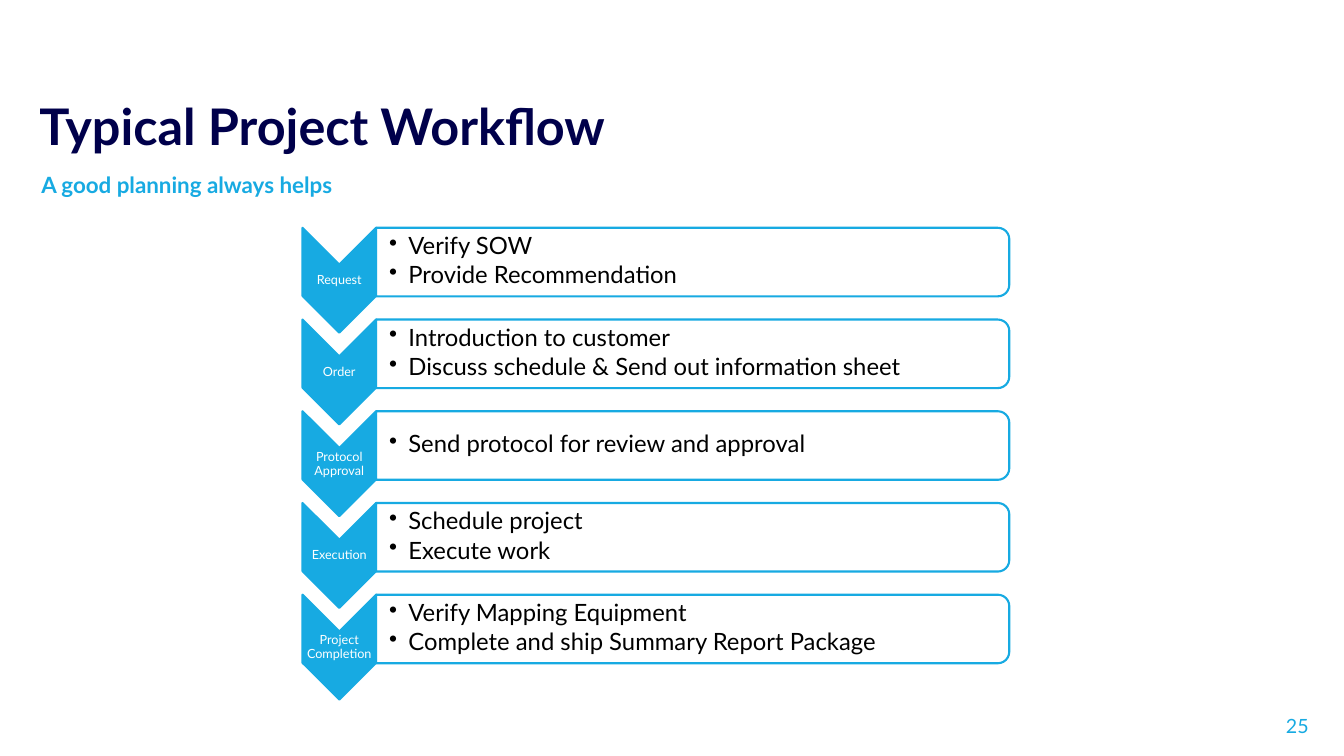
import pptx
import pptx.dml.color
import pptx.enum.shapes
import pptx.enum.text
import pptx.oxml
import pptx.oxml.ns
import pptx.util

Inches = pptx.util.Inches
Pt = pptx.util.Pt
RGBColor = pptx.dml.color.RGBColor
Shape = pptx.enum.shapes.MSO_SHAPE
Align = pptx.enum.text.PP_ALIGN
Anchor = pptx.enum.text.MSO_ANCHOR

NAVY = RGBColor(0x00, 0x00, 0x4B)
CYAN = RGBColor(0x17, 0xAA, 0xE2)
WHITE = RGBColor(0xFF, 0xFF, 0xFF)
BLACK = RGBColor(0x00, 0x00, 0x00)

STEPS = [
    ("Request", ["Verify SOW", "Provide Recommendation"]),
    ("Order", ["Introduction to customer",
               "Discuss schedule & Send out information sheet"]),
    ("Protocol Approval", ["Send protocol for review and approval"]),
    ("Execution", ["Schedule project", "Execute work"]),
    ("Project Completion", ["Verify Mapping Equipment",
                            "Complete and ship Summary Report Package"]),
]
STEP_PITCH = 0.91


def set_all(target, values):
    for name, value in values.items():
        setattr(target, name, value)


class SlideBuilder:
    font_name = "Lato"

    def __init__(self, page):
        self.page = page

    def fill_text(self, box, lines, font, paragraph, margins=(0, 0, 0, 0),
                  anchor=Anchor.TOP, bullet_indent=None):
        """Write one paragraph per line; margins run left, top, right, bottom."""
        frame = box.text_frame
        left, top, right, bottom = map(Inches, margins)
        set_all(frame, {
            "word_wrap": True, "auto_size": pptx.enum.text.MSO_AUTO_SIZE.NONE,
            "vertical_anchor": anchor, "margin_left": left, "margin_top": top,
            "margin_right": right, "margin_bottom": bottom})
        for index, line in enumerate(lines):
            para = frame.add_paragraph() if index else frame.paragraphs[0]
            set_all(para, paragraph)
            if bullet_indent:
                self.add_bullet(para, bullet_indent)
            span = para.add_run()
            span.text = line
            set_all(span.font, {"name": self.font_name, "size": Pt(font["size"]),
                                "bold": font.get("bold", False)})
            span.font.color.rgb = font["color"]

    def add_bullet(self, para, indent):
        properties = para._p.get_or_add_pPr()
        properties.set("marL", str(Inches(indent)))
        properties.set("indent", str(-Inches(indent)))
        bullet = pptx.oxml.parse_xml(
            f'<a:buChar {pptx.oxml.ns.nsdecls("a")} char="•"/>')
        properties.append(bullet)

    def title(self, bounds, text, font, paragraph):
        box = self.page.shapes.title
        set_all(box, dict(zip(("left", "top", "width", "height"),
                              map(Inches, bounds))))
        self.fill_text(box, [text], font, paragraph)

    def text(self, bounds, lines, font, paragraph, **layout):
        box = self.page.shapes.add_textbox(*map(Inches, bounds))
        self.fill_text(box, lines, font, paragraph, **layout)

    def turned_shape(self, kind, bounds, color, opacity=100):
        """Add a shape turned a quarter clockwise that covers the given bounds."""
        left, top, width, height = bounds
        shift = (width - height) / 2
        shape = self.page.shapes.add_shape(
            kind, Inches(left + shift), Inches(top - shift),
            Inches(height), Inches(width))
        shape.rotation = 90
        shape.shadow.inherit = False
        shape.fill.solid()
        shape.fill.fore_color.rgb = color
        shape.line.color.rgb = CYAN
        shape.line.width = Pt(1.5)
        if opacity < 100:
            solid = shape._element.spPr.find(pptx.oxml.ns.qn("a:solidFill"))
            solid[0].append(pptx.oxml.parse_xml(
                f'<a:alpha {pptx.oxml.ns.nsdecls("a")} val="{opacity * 1000}"/>'))

    def step(self, top, label, tasks):
        self.turned_shape(Shape.CHEVRON, (3, top, 0.73, 1.04), CYAN)
        self.text((3, top + 0.37, 0.73, 0.31), [label],
                  {"size": 9, "color": WHITE},
                  {"alignment": Align.CENTER, "line_spacing": 0.9,
                   "space_after": Pt(3)},
                  margins=(0.01,) * 4, anchor=Anchor.MIDDLE)
        self.turned_shape(Shape.ROUND_2_SAME_RECTANGLE,
                          (3.73, top, 6.28, 0.68), WHITE, opacity=90)
        self.text((3.73, top + 0.03, 6.25, 0.61), tasks,
                  {"size": 17, "color": BLACK},
                  {"line_spacing": 0.9, "space_after": Pt(2.55)},
                  margins=(0.13, 0.01, 0.01, 0.01), anchor=Anchor.MIDDLE,
                  bullet_indent=0.19)


def main():
    deck = pptx.Presentation()
    deck.slide_width = Inches(13.33)
    deck.slide_height = Inches(7.5)
    builder = SlideBuilder(deck.slides.add_slide(deck.slide_layouts[5]))
    builder.title((0.39, 1.02, 12.57, 0.4), "Typical Project Workflow",
                  {"size": 36, "color": NAVY, "bold": True},
                  {"alignment": Align.LEFT, "line_spacing": Pt(38)})
    builder.text((0.41, 1.71, 12.56, 0.55), ["A good planning always helps"],
                 {"size": 16, "color": CYAN, "bold": True},
                 {"line_spacing": Pt(18)})
    for index, (label, tasks) in enumerate(STEPS):
        builder.step(2.26 + index * STEP_PITCH, label, tasks)
    builder.text((12.27, 7.04, 0.71, 0.33), ["25"],
                 {"size": 14, "color": CYAN},
                 {"alignment": Align.RIGHT, "line_spacing": Pt(16)},
                 margins=(0.1, 0.05, 0, 0.05))
    deck.save("out.pptx")


if __name__ == "__main__":
    main()
